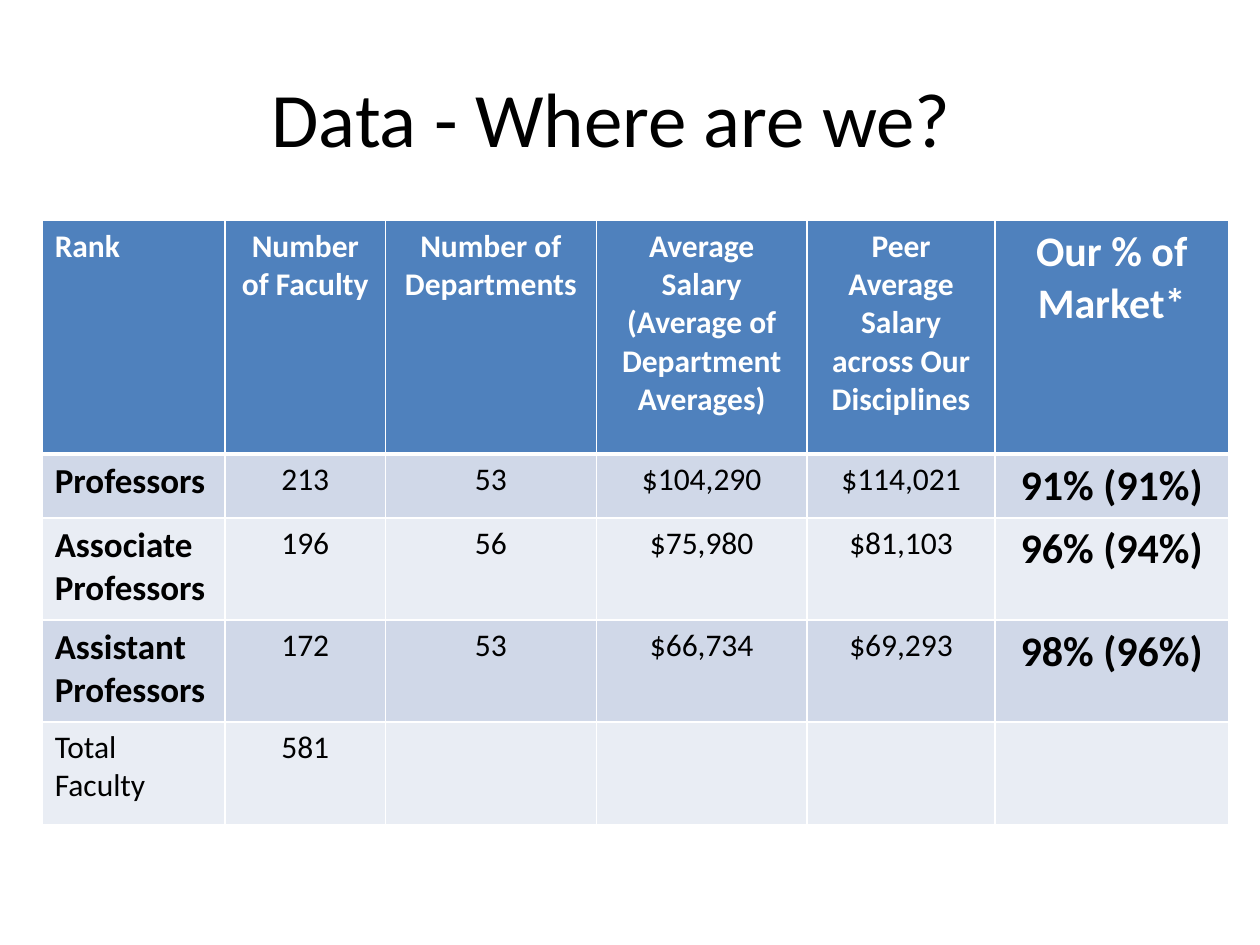
"""Build a slide with a table comparing faculty salaries with the market by rank."""
from lxml import etree
from pptx import Presentation
from pptx import util as u
from pptx.dml.color import RGBColor
from pptx.enum import text
from pptx.oxml.ns import qn

TITLE = "Data - Where are we?"
HEADER = [
    "Rank", "Number of Faculty", "Number of Departments",
    "Average Salary (Average of Department Averages)",
    "Peer Average Salary across Our Disciplines", "Our % of Market*",
]
RANKS = [
    ["Professors", "213", "53", "$104,290", "$114,021", "91% (91%)"],
    ["Associate Professors", "196", "56", "$75,980", "$81,103", "96% (94%)"],
    ["Assistant Professors", "172", "53", "$66,734", "$69,293", "98% (96%)"],
]
TOTAL = ["Total Faculty", "581", "", "", "", ""]
ROWS = [HEADER, *RANKS, TOTAL]

COLUMN_WIDTHS = [3.69, 3.23, 4.25, 4.25, 3.79, 4.7]
ROW_HEIGHTS = [4.7, 1.19, 2.06, 2.06, 2.06]
FONT = "Calibri"
WHITE, BLACK, BLUE = "FFFFFF", "000000", "4F81BD"
BANDS = ["E9EDF4", "D0D8E8"]


def style_paragraph(para, size, color, bold=False, align=text.PP_ALIGN.CENTER):
    para.alignment = align
    para.font.name = FONT
    para.font.size = u.Pt(size)
    para.font.bold = bold
    para.font.color.rgb = RGBColor.from_string(color)


def add_borders(cell, widths):
    properties = cell._tc.get_or_add_tcPr()
    for position, (side, width) in enumerate(widths.items()):
        line = etree.Element(qn(f"a:ln{side}"), w=str(u.Pt(width)))
        fill = etree.SubElement(line, qn("a:solidFill"))
        etree.SubElement(fill, qn("a:srgbClr"), val=WHITE)
        properties.insert(position, line)


def format_cell(cell, row, column):
    is_header = row == 0
    is_rank = 0 < row <= len(RANKS)
    is_market = column == len(HEADER) - 1
    size = 24 if is_market else 20 if is_rank and column == 0 else 18
    bold = is_header or is_rank and (column == 0 or is_market)
    align = text.PP_ALIGN.LEFT if column == 0 else text.PP_ALIGN.CENTER
    cell.fill.solid()
    cell.fill.fore_color.rgb = RGBColor.from_string(BLUE if is_header else BANDS[row % 2])
    style_paragraph(cell.text_frame.paragraphs[0], size,
                    WHITE if is_header else BLACK, bold, align)
    add_borders(cell, {"L": 1, "R": 1, "T": 3 if row == 1 else 1, "B": 3 if is_header else 1})


def add_title(page):
    title = page.shapes.title
    title.left, title.top = u.Cm(1.27), u.Cm(0.76)
    title.width, title.height = u.Cm(22.86), u.Cm(3.18)
    frame = title.text_frame
    frame.text = TITLE
    frame.vertical_anchor = text.MSO_ANCHOR.MIDDLE
    frame.margin_right = u.Cm(1)
    style_paragraph(frame.paragraphs[0], 44, BLACK)


def add_salary_table(page):
    table = page.shapes.add_table(
        len(ROWS), len(HEADER), u.Cm(0.85), u.Cm(4.45),
        u.Cm(sum(COLUMN_WIDTHS)), u.Cm(sum(ROW_HEIGHTS))).table
    for column, width in zip(table.columns, COLUMN_WIDTHS):
        column.width = u.Cm(width)
    for row, height in zip(table.rows, ROW_HEIGHTS):
        row.height = u.Cm(height)
    for row, values in enumerate(ROWS):
        for column, value in enumerate(values):
            cell = table.cell(row, column)
            cell.text = value
            format_cell(cell, row, column)


def main():
    deck = Presentation()
    deck.slide_width, deck.slide_height = u.Cm(25.4), u.Cm(19.05)
    page = deck.slides.add_slide(deck.slide_layouts.get_by_name("Title Only"))
    add_title(page)
    add_salary_table(page)
    deck.save("out.pptx")


if __name__ == "__main__":
    main()
